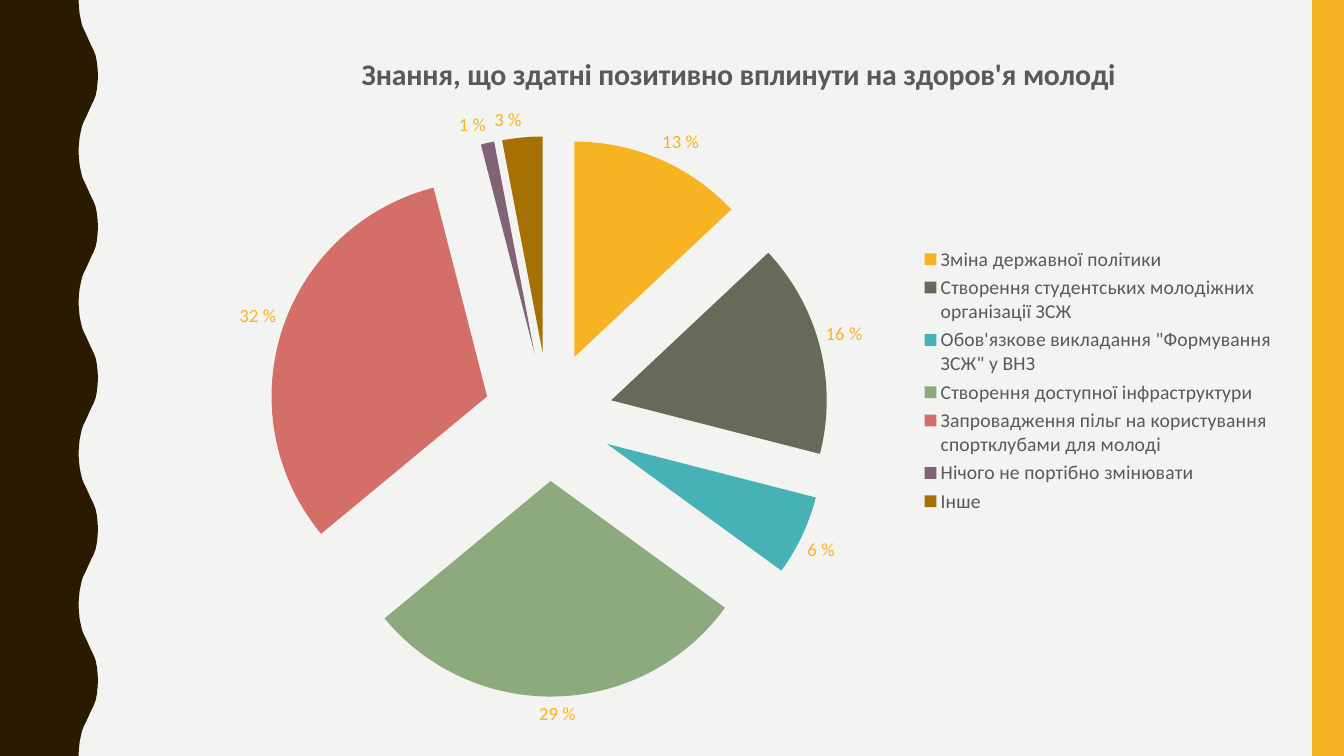
import pptx
import pptx.chart.data
import pptx.dml.color
import pptx.enum.chart
import pptx.enum.shapes
import pptx.oxml
import pptx.oxml.ns
import pptx.util

Cm, Pt = pptx.util.Cm, pptx.util.Pt
RGBColor = pptx.dml.color.RGBColor
BACKGROUND = RGBColor(0xF3, 0xF3, 0xF2)
BROWN = RGBColor(0x2A, 0x1A, 0x00)
AMBER = RGBColor(0xF8, 0xB3, 0x23)
GREY = RGBColor(0x59, 0x59, 0x59)
OLIVE = RGBColor(0x65, 0x6A, 0x59)
TEAL = RGBColor(0x46, 0xB2, 0xB5)
GREEN = RGBColor(0x8C, 0xAA, 0x7E)
RED = RGBColor(0xD3, 0x6F, 0x68)
PLUM = RGBColor(0x82, 0x62, 0x76)
OCHRE = RGBColor(0xA5, 0x71, 0x05)

TITLE = "Знання, що здатні позитивно вплинути на здоров'я молоді"
ANSWERS = [
    ("Зміна державної політики", 13, AMBER),
    ("Створення студентських молодіжних організації ЗСЖ", 16, OLIVE),
    ("Обов'язкове викладання \"Формування ЗСЖ\" у ВНЗ", 6, TEAL),
    ("Створення доступної інфраструктури", 29, GREEN),
    ("Запровадження пільг на користування спортклубами для молоді", 32, RED),
    ("Нічого не портібно змінювати", 1, PLUM),
    ("Інше", 3, OCHRE),
]
EXPLOSION = 30
FONTS = {
    "title": {"name": "Calibri", "size": Pt(21.3), "bold": True},
    "legend": {"name": "Calibri", "size": Pt(14)},
    "labels": {"name": "Calibri", "size": Pt(13.3)},
}
# Fractions of the chart area
TITLE_LAYOUT = {"x": 0.16, "y": 0.04}
PIE_LAYOUT = {"x": 0.08, "y": 0.16, "w": 0.51, "h": 0.78}
LEGEND_LAYOUT = {"x": 0.67, "y": 0.31, "w": 0.33, "h": 0.38}

SLIDE_WIDTH, SLIDE_HEIGHT = 33.87, 19.05
STRIPE_WIDTH = 0.8
WAVES = 5
WAVE_HEIGHT = SLIDE_HEIGHT / WAVES
# Half of one wave, from trough to crest, in centimetres
HALF_WAVE = [(1.98, 0), (1.99, 0.18), (2.01, 0.36), (2.04, 0.51), (2.07, 0.64),
             (2.11, 0.74), (2.16, 0.84), (2.21, 0.95), (2.26, 1.06), (2.31, 1.17),
             (2.36, 1.27), (2.41, 1.4), (2.44, 1.55), (2.46, 1.73), (2.47, 1.9)]


def set_font(font, color, formats):
    for name, value in formats.items():
        setattr(font, name, value)
    font.color.rgb = color


def chart_element(tag, value=None):
    element = pptx.oxml.parse_xml(f"<c:{tag} {pptx.oxml.ns.nsdecls('c')}/>")
    if value is not None:
        element.set("val", str(value))
    return element


def set_layout(parent, index, fractions, inner=False):
    """Place a chart element by hand, at fractions of the chart area."""
    for old_layout in parent.findall(pptx.oxml.ns.qn("c:layout")):
        parent.remove(old_layout)
    layout, manual = chart_element("layout"), chart_element("manualLayout")
    layout.append(manual)
    if inner:
        manual.append(chart_element("layoutTarget", "inner"))
    for key in ("x", "y"):
        manual.append(chart_element(f"{key}Mode", "edge"))
    for key, fraction in fractions.items():
        manual.append(chart_element(key, fraction))
    parent.insert(index, layout)


def paint(shape, color):
    shape.shadow.inherit = False
    shape.fill.solid()
    shape.fill.fore_color.rgb = color
    shape.line.fill.background()


def add_side_bands(slide):
    falling = [(x, WAVE_HEIGHT - y) for x, y in reversed(HALF_WAVE)]
    edge = [(x, wave * WAVE_HEIGHT + y)
            for wave in range(WAVES) for x, y in HALF_WAVE + falling]
    outline = [(Cm(x), Cm(y)) for x, y in edge + [(0, SLIDE_HEIGHT)]]
    builder = slide.shapes.build_freeform(0, 0)
    builder.add_line_segments(outline, close=True)
    paint(builder.convert_to_shape(), BROWN)

    stripe = slide.shapes.add_shape(
        pptx.enum.shapes.MSO_SHAPE.RECTANGLE, Cm(SLIDE_WIDTH - STRIPE_WIDTH), 0,
        Cm(STRIPE_WIDTH), Cm(SLIDE_HEIGHT))
    paint(stripe, AMBER)


def add_pie(slide):
    data = pptx.chart.data.CategoryChartData()
    data.categories = [answer for answer, _, _ in ANSWERS]
    data.add_series(TITLE, [share for _, share, _ in ANSWERS])
    chart = slide.shapes.add_chart(
        pptx.enum.chart.XL_CHART_TYPE.PIE, Cm(4.55), Cm(0.48), Cm(27.69), Cm(18.21),
        data).chart
    chart.font.name = "Calibri"
    chart.font.size = Pt(10)

    chart.has_title = True
    title_frame = chart.chart_title.text_frame
    title_frame.text = TITLE
    set_font(title_frame.paragraphs[0].runs[0].font, GREY, FONTS["title"])

    chart.has_legend = True
    legend = chart.legend
    legend.position = pptx.enum.chart.XL_LEGEND_POSITION.RIGHT
    legend.include_in_layout = False
    set_font(legend.font, GREY, FONTS["legend"])

    chart_space = chart.element
    for tag, index, fractions in (("title", 1, TITLE_LAYOUT),
                                  ("legend", 1, LEGEND_LAYOUT),
                                  ("plotArea", 0, PIE_LAYOUT)):
        target = chart_space.find(".//" + pptx.oxml.ns.qn(f"c:{tag}"))
        set_layout(target, index, fractions, inner=tag == "plotArea")

    plot = chart.plots[0]
    plot.vary_by_categories = True
    series = plot.series[0]
    for index, (_, _, color) in enumerate(ANSWERS):
        fill = series.points[index].format.fill
        fill.solid()
        fill.fore_color.rgb = color
    points = chart_space.findall(".//" + pptx.oxml.ns.qn("c:dPt"))
    points[0].addprevious(chart_element("explosion", EXPLOSION))
    for point in points:
        properties = point.find(pptx.oxml.ns.qn("c:spPr"))
        properties.addprevious(chart_element("explosion", EXPLOSION))

    labels = series.data_labels
    label_formats = {
        "show_value": True, "show_percentage": False,
        "number_format": '0" %"', "number_format_is_linked": False,
        "position": pptx.enum.chart.XL_LABEL_POSITION.OUTSIDE_END,
    }
    for name, value in label_formats.items():
        setattr(labels, name, value)
    set_font(labels.font, AMBER, FONTS["labels"])


def main():
    presentation = pptx.Presentation()
    presentation.slide_width = Cm(SLIDE_WIDTH)
    presentation.slide_height = Cm(SLIDE_HEIGHT)
    slide = presentation.slides.add_slide(presentation.slide_layouts[6])
    slide.background.fill.solid()
    slide.background.fill.fore_color.rgb = BACKGROUND
    add_side_bands(slide)
    add_pie(slide)
    presentation.save("out.pptx")


if __name__ == "__main__":
    main()
